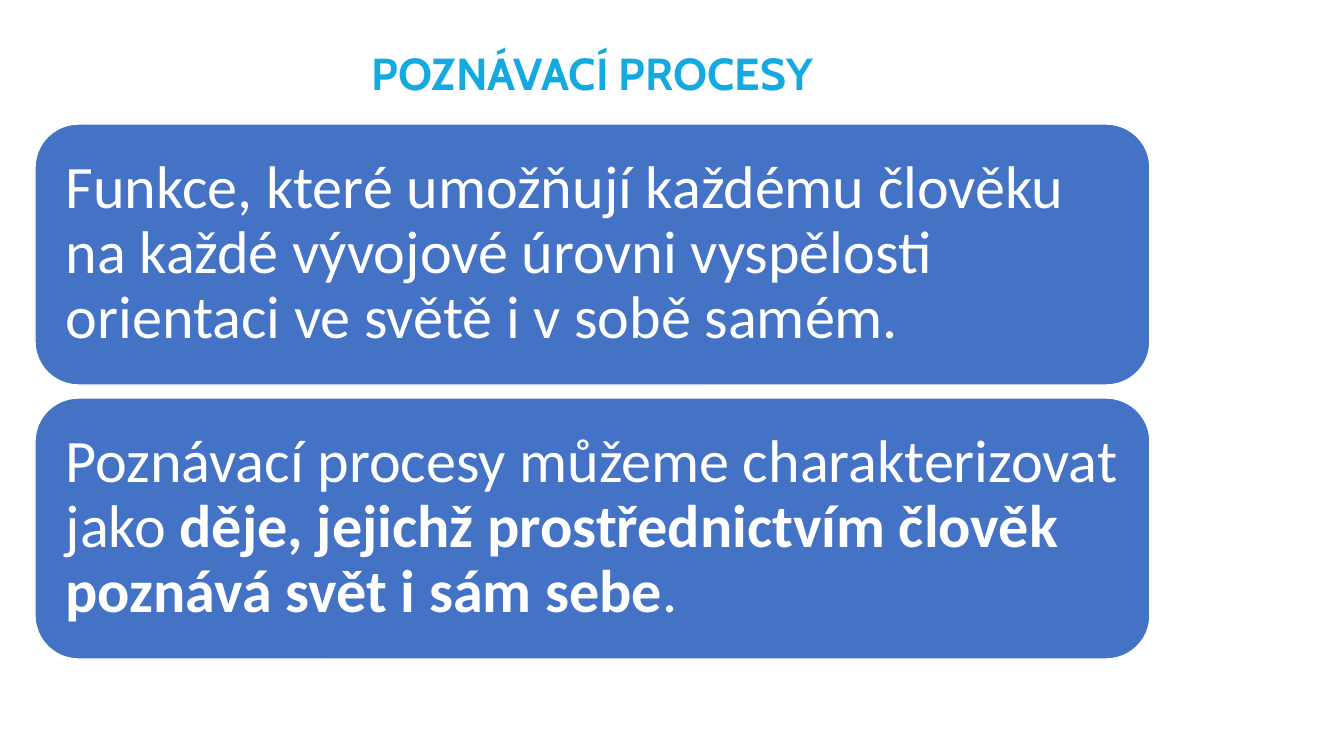
from pptx import Presentation
from pptx.dml.color import RGBColor
from pptx.enum.shapes import MSO_SHAPE
from pptx.enum.text import MSO_ANCHOR, PP_ALIGN
from pptx.util import Pt

COLORS = {"title": "14AAE0", "box": "4472C4", "white": "FFFFFF"}
WIDE, HIGH = 1344, 756
SCALE = 12192000 / WIDE
LEFT, WIDTH = 35, 1115
TOP, HEIGHT, GAP = 124, 261, 13
INSET = 18

# Each box holds runs of (text, bold)
BOXES = [
    [("Funkce, které umožňují každému člověku na každé vývojové úrovni "
      "vyspělosti orientaci ve světě i v sobě samém.", False)],
    [("Poznávací procesy můžeme charakterizovat jako ", False),
     ("děje, jejichž prostřednictvím člověk poznává svět i sám sebe", True),
     (".", False)],
]


def px(count):
    return round(count * SCALE)


def style(par, font, size, color, align):
    par.alignment = align
    par.line_spacing = 0.9
    par.font.name = font
    par.font.size = Pt(size)
    par.font.color.rgb = RGBColor.from_string(COLORS[color])


deck = Presentation()
deck.slide_width, deck.slide_height = px(WIDE), px(HIGH)
slide = deck.slides.add_slide(deck.slide_layouts[5])

title = slide.shapes.title
title.left, title.top = px(LEFT), px(40)
title.width, title.height = px(WIDTH), px(72)
title.text_frame.text = "POZNÁVACÍ PROCESY"
title.text_frame.vertical_anchor = MSO_ANCHOR.MIDDLE
head = title.text_frame.paragraphs[0]
style(head, "Cabin", 32, "title", PP_ALIGN.CENTER)
head.font.bold = True

for row, runs in enumerate(BOXES):
    top = TOP + row * (HEIGHT + GAP)
    box = slide.shapes.add_shape(MSO_SHAPE.ROUNDED_RECTANGLE,
                                 px(LEFT), px(top), px(WIDTH), px(HEIGHT))
    box.shadow.inherit = False
    box.fill.solid()
    box.fill.fore_color.rgb = RGBColor.from_string(COLORS["box"])
    box.line.color.rgb = RGBColor.from_string(COLORS["white"])
    box.line.width = Pt(1)
    frame = box.text_frame
    frame.word_wrap = True
    frame.vertical_anchor = MSO_ANCHOR.MIDDLE
    frame.margin_left = frame.margin_right = px(INSET)
    frame.margin_top = frame.margin_bottom = px(INSET)
    par = frame.paragraphs[0]
    style(par, "Calibri", 43, "white", PP_ALIGN.LEFT)
    for text, bold in runs:
        run = par.add_run()
        run.text = text
        run.font.bold = bold

deck.save("out.pptx")
